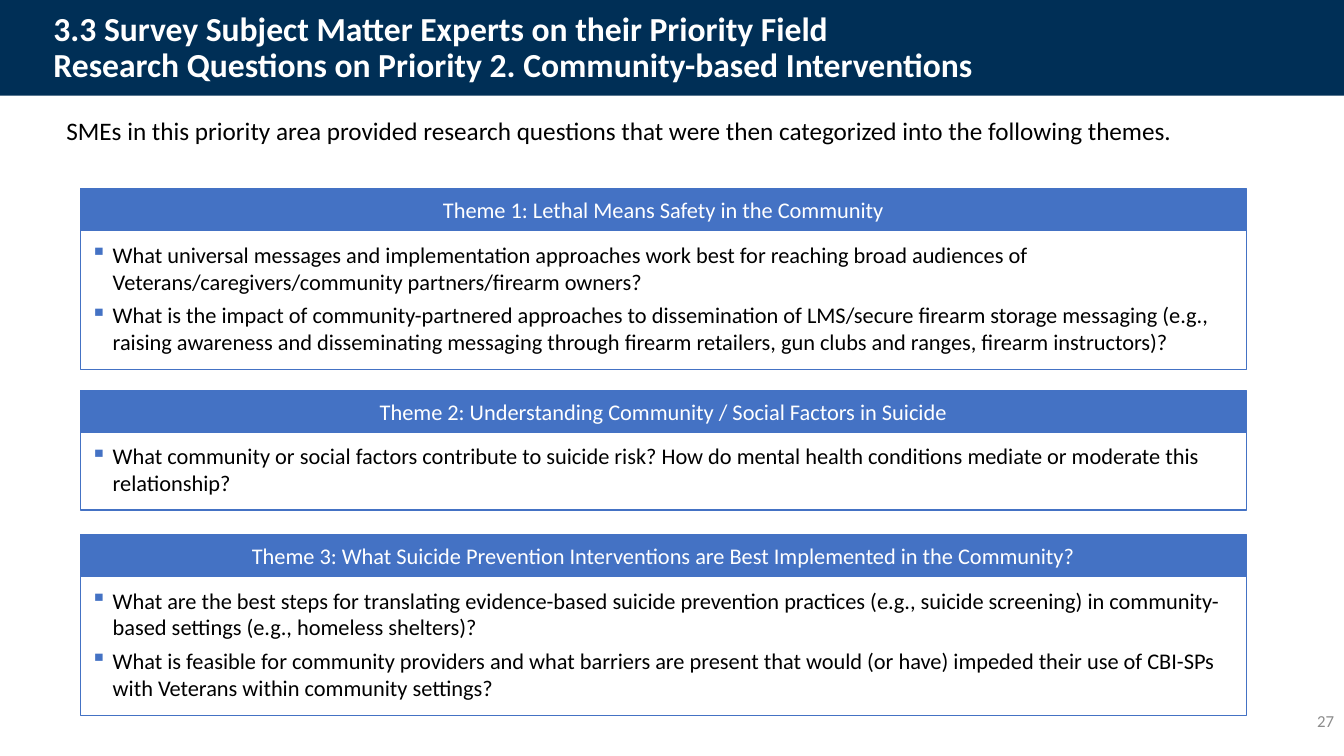
"""Build the slide of survey themes for community-based interventions."""
from dataclasses import dataclass

from lxml.etree import SubElement
from pptx import Presentation
from pptx.dml.color import RGBColor
from pptx.enum.shapes import MSO_SHAPE
from pptx.enum.text import MSO_ANCHOR, MSO_AUTO_SIZE, PP_ALIGN
from pptx.oxml.ns import qn
from pptx.shapes.autoshape import Shape
from pptx.slide import Slide
from pptx.text.text import TextFrame, _Paragraph
from pptx.util import Inches, Pt

NAVY = RGBColor(0x00, 0x2F, 0x56)
BLUE = RGBColor(0x44, 0x72, 0xC4)
WHITE = RGBColor(0xFF, 0xFF, 0xFF)
BLACK = RGBColor(0x00, 0x00, 0x00)
GRAY = RGBColor(0x8C, 0x8C, 0x8C)
FONT = "Calibri"
THEME_LEFT, THEME_WIDTH, HEADER_HEIGHT = 0.8, 11.56, 0.42


@dataclass(frozen=True)
class Theme:
    heading: str
    top: float
    body_height: float
    questions: tuple[str, ...]


THEMES = (
    Theme("Theme 1: Lethal Means Safety in the Community", 1.87, 1.38, (
        "What universal messages and implementation approaches work best for reaching broad "
        "audiences of Veterans/caregivers/community partners/firearm owners?",
        "What is the impact of community-partnered approaches to dissemination of LMS/secure "
        "firearm storage messaging (e.g., raising awareness and disseminating messaging through "
        "firearm retailers, gun clubs and ranges, firearm instructors)?")),
    Theme("Theme 2: Understanding Community / Social Factors in Suicide", 3.87, 0.77, (
        "What community or social factors contribute to suicide risk? How do mental health "
        "conditions mediate or moderate this relationship?",)),
    Theme("Theme 3: What Suicide Prevention Interventions are Best Implemented in the Community?",
          5.3, 1.38, (
              "What are the best steps for translating evidence-based suicide prevention practices "
              "(e.g., suicide screening) in community-based settings (e.g., homeless shelters)?",
              "What is feasible for community providers and what barriers are present that would "
              "(or have) impeded their use of CBI-SPs with Veterans within community settings?")),
)


def format_paragraph(paragraph: _Paragraph, size: float, color: RGBColor,
                     alignment: PP_ALIGN = PP_ALIGN.LEFT, bold: bool = False) -> None:
    paragraph.alignment = alignment
    for run in paragraph.runs:
        run.font.name = FONT
        run.font.size = Pt(size)
        run.font.bold = bold
        run.font.color.rgb = color


def add_bullet(paragraph: _Paragraph) -> None:
    properties = paragraph._p.get_or_add_pPr()
    properties.set("marL", str(Inches(0.22)))
    properties.set("indent", str(-Inches(0.22)))
    bullet_color = SubElement(properties, qn("a:buClr"))
    SubElement(bullet_color, qn("a:srgbClr"), val=str(BLUE))
    SubElement(properties, qn("a:buChar"), char="▪")


def add_rectangle(slide: Slide, left: float, top: float, width: float, height: float,
                  fill: RGBColor, line: RGBColor) -> Shape:
    shape = slide.shapes.add_shape(MSO_SHAPE.RECTANGLE, Inches(left), Inches(top),
                                   Inches(width), Inches(height))
    shape.shadow.inherit = False
    shape.fill.solid()
    shape.fill.fore_color.rgb = fill
    shape.line.color.rgb = line
    shape.line.width = Pt(0.75)
    return shape


def add_text(slide: Slide, text: str, left: float, top: float, width: float, height: float,
             size: float, color: RGBColor, alignment: PP_ALIGN = PP_ALIGN.LEFT) -> TextFrame:
    text_frame = slide.shapes.add_textbox(Inches(left), Inches(top), Inches(width),
                                          Inches(height)).text_frame
    text_frame.word_wrap = True
    text_frame.text = text
    format_paragraph(text_frame.paragraphs[0], size, color, alignment)
    return text_frame


def add_title(slide: Slide, text: str) -> None:
    band = add_rectangle(slide, 0, 0, 13.33, 0.95, NAVY, NAVY)
    band.line.fill.background()
    title = slide.shapes.title
    band._element.addnext(title._element)
    title.left, title.top = Inches(0.43), Inches(0.11)
    title.width, title.height = Inches(11.5), Inches(0.74)
    text_frame = title.text_frame
    text_frame.text = text
    text_frame.auto_size = MSO_AUTO_SIZE.NONE
    text_frame.vertical_anchor = MSO_ANCHOR.MIDDLE
    paragraph = text_frame.paragraphs[0]
    paragraph.line_spacing = 0.9
    format_paragraph(paragraph, 24, WHITE, bold=True)


def add_theme(slide: Slide, theme: Theme) -> None:
    body = add_rectangle(slide, THEME_LEFT, theme.top + HEADER_HEIGHT, THEME_WIDTH,
                         theme.body_height, WHITE, BLUE)
    text_frame = body.text_frame
    text_frame.vertical_anchor = MSO_ANCHOR.TOP
    text_frame.margin_top = text_frame.margin_bottom = Inches(0.1)
    text_frame.text = "\n".join(theme.questions)
    for index, paragraph in enumerate(text_frame.paragraphs):
        if index:
            paragraph.space_before = Pt(4.8)
        add_bullet(paragraph)
        format_paragraph(paragraph, 16, BLACK)

    header = add_rectangle(slide, THEME_LEFT, theme.top, THEME_WIDTH, HEADER_HEIGHT, BLUE, BLUE)
    header.text_frame.vertical_anchor = MSO_ANCHOR.MIDDLE
    header.text_frame.text = theme.heading
    format_paragraph(header.text_frame.paragraphs[0], 16, WHITE, PP_ALIGN.CENTER)


def main() -> None:
    presentation = Presentation()
    presentation.slide_width, presentation.slide_height = Inches(13.33), Inches(7.5)
    slide = presentation.slides.add_slide(presentation.slide_layouts[5])
    add_title(slide, "3.3 Survey Subject Matter Experts on their Priority Field\v"
                     "Research Questions on Priority 2. Community-based Interventions")
    number = add_text(slide, "27", 10.33, 6.95, 3, 0.4, 12, GRAY, PP_ALIGN.RIGHT)
    number.vertical_anchor = MSO_ANCHOR.MIDDLE
    for theme in THEMES:
        add_theme(slide, theme)
    add_text(slide, "SMEs in this priority area provided research questions that were then "
                    "categorized into the following themes.", 0.56, 1.09, 12.21, 0.4, 18, BLACK)
    presentation.save("out.pptx")


if __name__ == "__main__":
    main()
